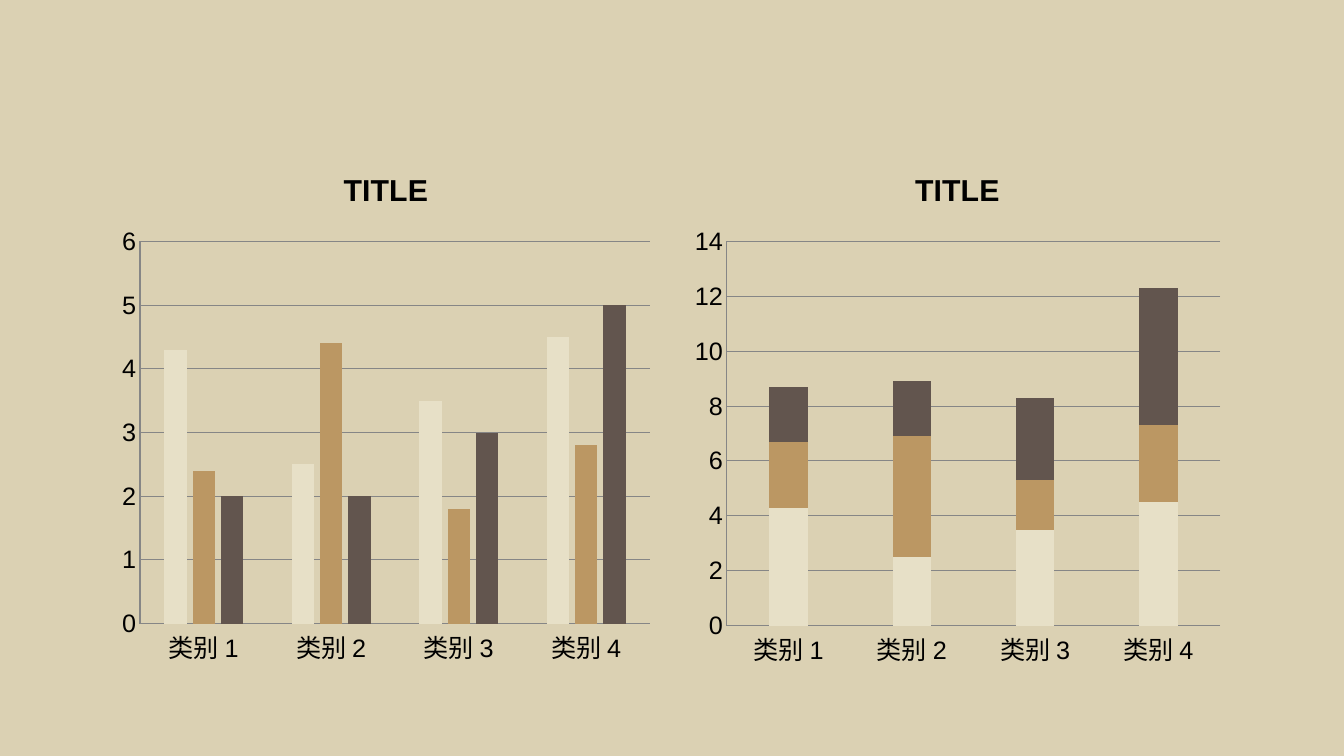
import pptx
import pptx.chart.data
import pptx.dml.color
import pptx.enum.chart
import pptx.util

# Content
CATEGORIES = ["类别 1", "类别 2", "类别 3", "类别 4"]
SERIES = [
    ("Series 1", [4.3, 2.5, 3.5, 4.5], "cream"),
    ("Series 2", [2.4, 4.4, 1.8, 2.8], "tan"),
    ("Series 3", [2, 2, 3, 5], "brown"),
]
KINDS = pptx.enum.chart.XL_CHART_TYPE
CHARTS = [
    dict(title="TITLE", kind=KINDS.COLUMN_CLUSTERED, overlap=-27,
         top_value=6, step=1, place=(111, 149, 550, 526)),
    dict(title="TITLE", kind=KINDS.COLUMN_STACKED, overlap=100,
         top_value=14, step=2, place=(684, 149, 547, 528)),
]
COLOURS = {
    "background": "DBD1B3", "text": "000000", "line": "868686",
    "cream": "E7E0C7", "tan": "BB9763", "brown": "62554E",
}
FONT = "Arial"
SLIDE_SIZE = (1344, 756)
GAP_WIDTH = 219


def px(length):
    return pptx.util.Emu(round(length * 914400 / 100.8))


def colour(name):
    return pptx.dml.color.RGBColor.from_string(COLOURS[name])


def style_font(font, size, bold=False):
    font.name = FONT
    font.size = pptx.util.Pt(size)
    font.bold = bold
    font.color.rgb = colour("text")


def write_text(frame, text, size=18, bold=False):
    para = frame.paragraphs[0]
    span = para.add_run()
    span.text = text
    style_font(span.font, size, bold)


def style_line(line):
    line.color.rgb = colour("line")
    line.width = pptx.util.Pt(0.75)


def add_columns(page, title, kind, overlap, top_value, step, place):
    data = pptx.chart.data.CategoryChartData()
    data.categories = CATEGORIES
    for name, values, _ in SERIES:
        data.add_series(name, values)
    chart = page.shapes.add_chart(kind, *map(px, place), data).chart

    # Title and text
    style_font(chart.font, 18)
    chart.has_legend = False
    chart.has_title = True
    write_text(chart.chart_title.text_frame, title, size=21.6, bold=True)
    chart.chart_title.include_in_layout = False

    # Axes
    for axis in (chart.category_axis, chart.value_axis):
        axis.major_tick_mark = pptx.enum.chart.XL_TICK_MARK.NONE
        axis.minor_tick_mark = pptx.enum.chart.XL_TICK_MARK.NONE
        style_line(axis.format.line)
    scale = chart.value_axis
    scale.minimum_scale = 0
    scale.maximum_scale = top_value
    scale.major_unit = step
    scale.has_major_gridlines = True
    style_line(scale.major_gridlines.format.line)

    # Columns
    plot = chart.plots[0]
    plot.gap_width = GAP_WIDTH
    plot.overlap = overlap
    plot.vary_by_categories = False
    for series, (_, _, fill_name) in zip(plot.series, SERIES):
        series.format.fill.solid()
        series.format.fill.fore_color.rgb = colour(fill_name)


def main():
    deck = pptx.Presentation()
    deck.slide_width, deck.slide_height = map(px, SLIDE_SIZE)
    page = deck.slides.add_slide(deck.slide_layouts[6])
    page.background.fill.solid()
    page.background.fill.fore_color.rgb = colour("background")
    for settings in CHARTS:
        add_columns(page, **settings)
    deck.save("out.pptx")


if __name__ == "__main__":
    main()
